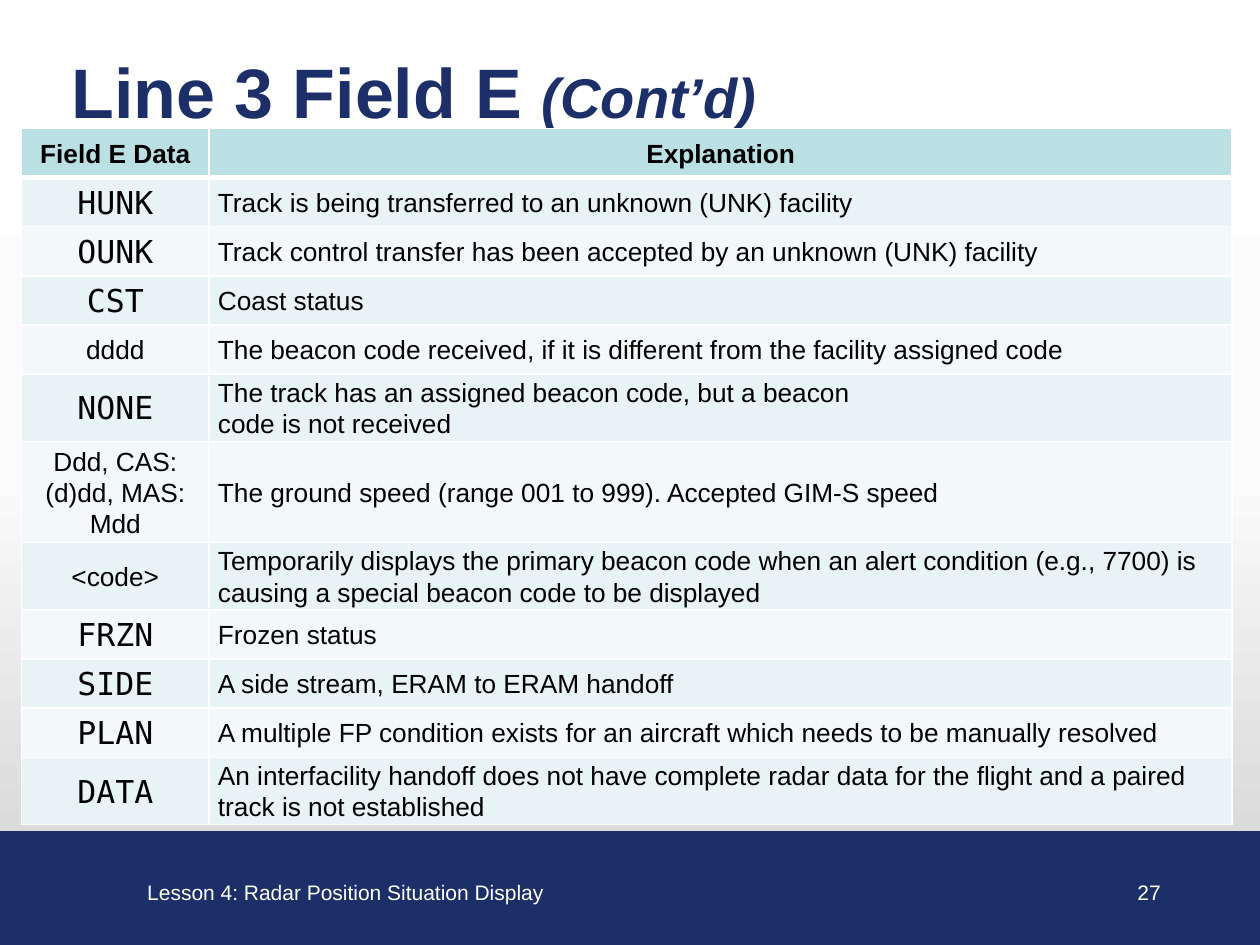
from copy import deepcopy
from dataclasses import dataclass

from lxml import etree
from pptx import Presentation
from pptx.dml.color import RGBColor
from pptx.enum.shapes import MSO_SHAPE
from pptx.enum.text import MSO_ANCHOR, PP_ALIGN
from pptx.oxml.ns import qn
from pptx.util import Inches, Pt

LEFT, CENTER, RIGHT = PP_ALIGN.LEFT, PP_ALIGN.CENTER, PP_ALIGN.RIGHT
TOP, MIDDLE = MSO_ANCHOR.TOP, MSO_ANCHOR.MIDDLE
RECTANGLE = MSO_SHAPE.RECTANGLE

COLORS = {
    "navy": "1D2F68", "white": "FFFFFF", "black": "000000",
    "header": "BBE0E3", "odd": "E7F3F4", "even": "F3F9FA",
}
BACKGROUND_STOPS = [(0, "FFFFFF"), (50, "FBFBFB"), (100, "D0D0D0")]
SANS, MONO = "Arial", "DejaVu Sans Mono"


@dataclass
class Span:
    text: str
    size: float
    color: str = "black"
    name: str = SANS
    bold: bool = False
    italic: bool = False


@dataclass
class Label:
    left: float
    top: float
    width: float
    height: float
    spans: list[Span]
    align: int = LEFT
    anchor: int = MIDDLE


@dataclass
class Entry:
    field: str
    explanation: str
    height: float = 0.39
    mono: bool = True


LABELS = [
    Label(1.07, 6.93, 4.32, 0.3,
          [Span("Lesson 4: Radar Position Situation Display", 12, "white")], anchor=TOP),
    Label(0.47, 0.38, 9.27, 0.67,
          [Span("Line 3 Field E ", 40, "navy", bold=True),
           Span("(Cont’d)", 32, "navy", bold=True, italic=True)]),
    Label(8.69, 6.93, 0.62, 0.3, [Span("27", 12, "white")], RIGHT),
]
ENTRIES = [
    Entry("HUNK", "Track is being transferred to an unknown (UNK) facility"),
    Entry("OUNK", "Track control transfer has been accepted by an unknown (UNK) facility"),
    Entry("CST", "Coast status"),
    Entry("dddd", "The beacon code received, if it is different from the facility assigned code",
          mono=False),
    Entry("NONE", "The track has an assigned beacon code, but a beacon\ncode is not received", 0.46),
    Entry("Ddd, CAS: (d)dd, MAS: Mdd",
          "The ground speed (range 001 to 999). Accepted GIM-S speed", 0.49, mono=False),
    Entry("<code>", "Temporarily displays the primary beacon code when an alert condition "
          "(e.g., 7700) is causing a special beacon code to be displayed", 0.46, mono=False),
    Entry("FRZN", "Frozen status"),
    Entry("SIDE", "A side stream, ERAM to ERAM handoff"),
    Entry("PLAN", "A multiple FP condition exists for an aircraft which needs to be manually resolved"),
    Entry("DATA", "An interfacility handoff does not have complete radar data for the flight "
          "and a paired track is not established", 0.46),
]
COLUMN_WIDTHS = [1.49, 8.12]
HEADER_HEIGHT = 0.39


def rgb(name: str) -> RGBColor:
    return RGBColor.from_string(COLORS[name])


def add_span(para, span: Span) -> None:
    run = para.add_run()
    run.text = span.text
    formats = {"name": span.name, "size": Pt(span.size),
               "bold": span.bold, "italic": span.italic}
    for attribute, value in formats.items():
        setattr(run.font, attribute, value)
    run.font.color.rgb = rgb(span.color)


def set_background(page) -> None:
    """Fill the page with a top-to-bottom gradient of any number of stops."""
    fill = page.background.fill
    fill.gradient()
    fill.gradient_angle = 270
    stop_list = next(page.element.iter(qn("a:gsLst")))
    for stop in list(stop_list):
        stop_list.remove(stop)
    for position, color in BACKGROUND_STOPS:
        stop = etree.SubElement(stop_list, qn("a:gs"), pos=str(position * 1000))
        etree.SubElement(stop, qn("a:srgbClr"), val=color)


def add_footer_band(page) -> None:
    band = page.shapes.add_shape(RECTANGLE, Inches(-0.02), Inches(6.6), Inches(10.02), Inches(0.9))
    band.shadow.inherit = False
    band.fill.solid()
    band.fill.fore_color.rgb = rgb("navy")
    band.line.color.rgb = rgb("navy")
    band.line.width = Pt(0.75)


def add_label(page, label: Label) -> None:
    box = page.shapes.add_textbox(Inches(label.left), Inches(label.top),
                                  Inches(label.width), Inches(label.height))
    frame = box.text_frame
    frame.word_wrap = True
    frame.vertical_anchor = label.anchor
    para = frame.paragraphs[0]
    para.alignment = label.align
    for span in label.spans:
        add_span(para, span)


def set_borders(cell, bottom: float) -> None:
    """Draw white borders, 1 pt except for the given bottom width."""
    properties = cell._tc.get_or_add_tcPr()
    line = etree.Element(qn("a:lnL"), w=str(Pt(1)))
    color = etree.SubElement(etree.SubElement(line, qn("a:solidFill")), qn("a:srgbClr"))
    color.set("val", COLORS["white"])
    for index, side in enumerate("LRTB"):
        border = deepcopy(line)
        border.tag = qn(f"a:ln{side}")
        if side == "B":
            border.set("w", str(Pt(bottom)))
        properties.insert(index, border)


def fill_cell(cell, span: Span, align: int, fill: str, bottom: float = 1) -> None:
    """Write the span's text, one paragraph for each of its lines."""
    formats = {"margin_left": Inches(0.07), "margin_right": Inches(0.07),
               "margin_top": 0, "margin_bottom": 0, "vertical_anchor": MIDDLE}
    for attribute, value in formats.items():
        setattr(cell, attribute, value)
    cell.fill.solid()
    cell.fill.fore_color.rgb = rgb(fill)
    set_borders(cell, bottom)
    frame = cell.text_frame
    for index, text in enumerate(span.text.split("\n")):
        para = frame.add_paragraph() if index else frame.paragraphs[0]
        para.alignment = align
        para.line_spacing = 1.07
        add_span(para, Span(text, span.size, name=span.name, bold=span.bold))


def add_field_table(page) -> None:
    heights = [HEADER_HEIGHT] + [entry.height for entry in ENTRIES]
    table = page.shapes.add_table(len(heights), len(COLUMN_WIDTHS), Inches(0.17), Inches(1.02),
                                  Inches(sum(COLUMN_WIDTHS)), Inches(sum(heights))).table
    for column, width in zip(table.columns, COLUMN_WIDTHS):
        column.width = Inches(width)
    for row, height in zip(table.rows, heights):
        row.height = Inches(height)
    for column, title in enumerate(["Field E Data", "Explanation"]):
        fill_cell(table.cell(0, column), Span(title, 15, bold=True), CENTER, "header", bottom=3)
    for row, entry in enumerate(ENTRIES, start=1):
        fill = "odd" if row % 2 else "even"
        field = Span(entry.field, 18, name=MONO) if entry.mono else Span(entry.field, 15)
        fill_cell(table.cell(row, 0), field, CENTER, fill)
        fill_cell(table.cell(row, 1), Span(entry.explanation, 15), LEFT, fill)


def main() -> None:
    deck = Presentation()
    deck.slide_width, deck.slide_height = Inches(10), Inches(7.5)
    page = deck.slides.add_slide(deck.slide_layouts[6])
    set_background(page)
    add_footer_band(page)
    for label in LABELS:
        add_label(page, label)
    add_field_table(page)
    deck.save("out.pptx")


if __name__ == "__main__":
    main()
